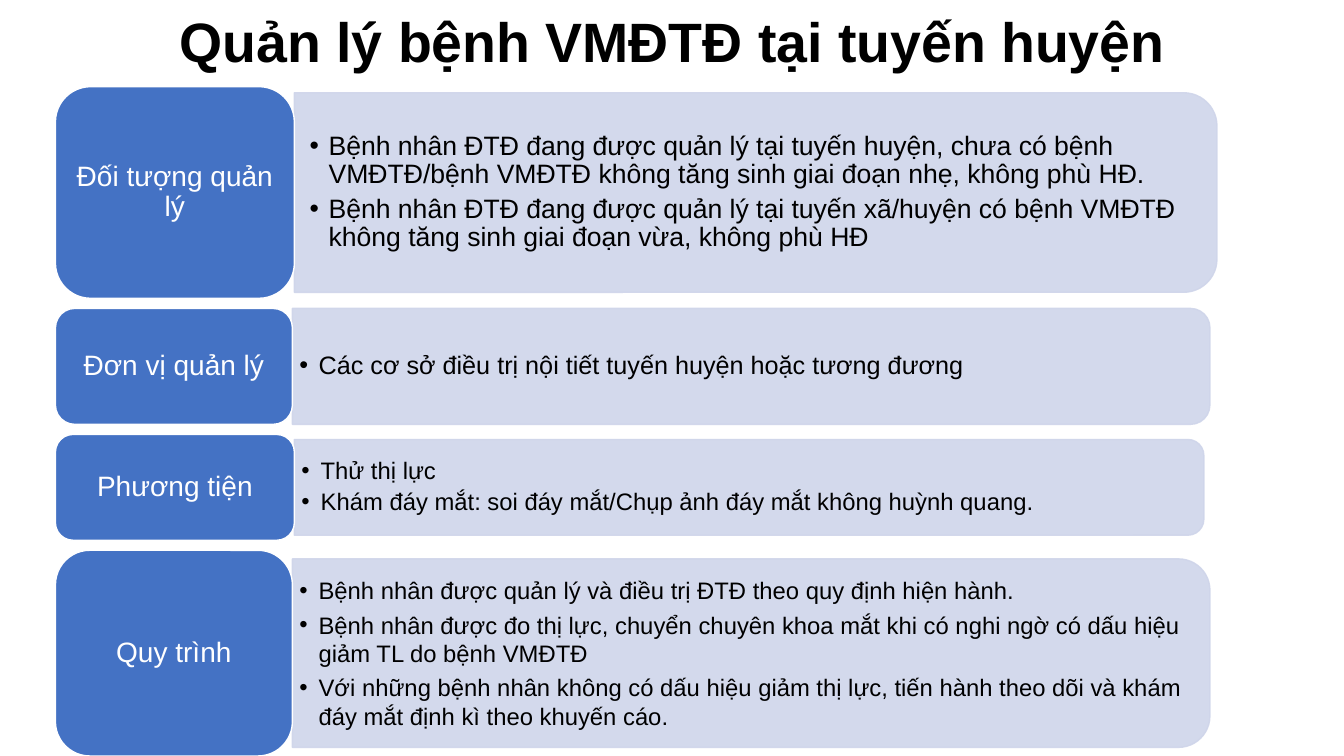
"""Build a slide on managing diabetic eye disease at district level."""
from dataclasses import dataclass

from lxml.etree import SubElement
from pptx import Presentation
from pptx.dml.color import RGBColor
from pptx.enum.shapes import MSO_SHAPE as Preset
from pptx.enum.text import MSO_ANCHOR as Anchor, MSO_AUTO_SIZE as AutoSize, PP_ALIGN as Align
from pptx.oxml.ns import qn
from pptx.util import Inches, Pt

BLACK = RGBColor(0x00, 0x00, 0x00)
WHITE = RGBColor(0xFF, 0xFF, 0xFF)
BLUE = RGBColor(0x44, 0x72, 0xC4)
PALE_BLUE = RGBColor(0xCF, 0xD5, 0xEA)

FONT = "Arial"
LABEL_LEFT = 0.55
FIRST_TOP = 0.86
ROW_GAP = 0.1
CORNER_INSET = 0.0488
BULLET_INDENT = 0.19


@dataclass
class Row:
    """One label with its panel of bullets, lengths in inches."""
    label: str
    bullets: list
    label_size: tuple
    panel_size: tuple
    font_size: int
    margins: tuple = (0.07, 0.04)
    line_spacing: float = 0.9


ROWS = [
    Row("Đối tượng quản lý",
        ["Bệnh nhân ĐTĐ đang được quản lý tại tuyến huyện, chưa có bệnh "
         "VMĐTĐ/bệnh VMĐTĐ không tăng sinh giai đoạn nhẹ, không phù HĐ.",
         "Bệnh nhân ĐTĐ đang được quản lý tại tuyến xã/huyện có bệnh VMĐTĐ "
         "không tăng sinh giai đoạn vừa, không phù HĐ"],
        (2.37, 2.1), (9.15, 1.98), 19, margins=(0.15, 0.07)),
    Row("Đơn vị quản lý",
        ["Các cơ sở điều trị nội tiết tuyến huyện hoặc tương đương"],
        (2.35, 1.15), (9.1, 1.15), 18),
    Row("Phương tiện",
        ["Thử thị lực",
         "Khám đáy mắt: soi đáy mắt/Chụp ảnh đáy mắt không huỳnh quang."],
        (2.37, 1.05), (9.02, 0.95), 17),
    Row("Quy trình",
        ["Bệnh nhân được quản lý và điều trị ĐTĐ theo quy định hiện hành.",
         "Bệnh nhân được đo thị lực, chuyển chuyên khoa mắt khi có nghi ngờ có "
         "dấu hiệu giảm TL do bệnh VMĐTĐ",
         "Với những bệnh nhân không có dấu hiệu giảm thị lực, tiến hành theo dõi "
         "và khám đáy mắt định kì theo khuyến cáo."],
        (2.35, 2.04), (9.1, 1.87), 17, line_spacing=1.0),
]


def format_frame(text_frame, margins):
    """Wrap and vertically centre a text frame with the given margins."""
    text_frame.word_wrap = True
    text_frame.auto_size = AutoSize.NONE
    text_frame.vertical_anchor = Anchor.MIDDLE
    text_frame.margin_left = text_frame.margin_right = Inches(margins[0])
    text_frame.margin_top = text_frame.margin_bottom = Inches(margins[1])


def format_paragraph(paragraph, size, color, align, line_spacing=0.9, bold=False):
    """Set the spacing, alignment and run font of a paragraph."""
    paragraph.alignment = align
    paragraph.line_spacing = line_spacing
    for run in paragraph.runs:
        run.font.name = FONT
        run.font.size = Pt(size)
        run.font.bold = bold
        run.font.color.rgb = color


def add_bullet(paragraph):
    """Give a paragraph a round bullet with a hanging indent."""
    properties = paragraph._p.get_or_add_pPr()
    properties.set("marL", str(Inches(BULLET_INDENT)))
    properties.set("indent", str(-Inches(BULLET_INDENT)))
    SubElement(properties, qn("a:buFont"), typeface=FONT)
    SubElement(properties, qn("a:buChar"), char="•")


def add_filled_shape(slide, preset, left, top, width, height, fill, line):
    """Add a flat preset shape with a one-point outline."""
    shape = slide.shapes.add_shape(
        preset, Inches(left), Inches(top), Inches(width), Inches(height))
    shape.shadow.inherit = False
    shape.fill.solid()
    shape.fill.fore_color.rgb = fill
    shape.line.color.rgb = line
    shape.line.width = Pt(1)
    return shape


def add_title(slide, text):
    """Fill and place the title placeholder."""
    title = slide.shapes.title
    title.left, title.top = Inches(0.92), Inches(0.13)
    title.width, title.height = Inches(11.5), Inches(0.62)
    title.text_frame.text = text
    format_frame(title.text_frame, (0.1, 0.05))
    format_paragraph(title.text_frame.paragraphs[0], 39.6, BLACK, Align.CENTER, bold=True)


def add_panel(slide, left, middle, row):
    """Add a pale panel, rounded on its right side, and its bullets."""
    width, height = row.panel_size
    panel = add_filled_shape(
        slide, Preset.ROUND_2_SAME_RECTANGLE, left + (width - height) / 2,
        middle - width / 2, height, width, PALE_BLUE, PALE_BLUE)
    panel.rotation = 90
    for color in panel._element.spPr.iter(qn("a:srgbClr")):
        SubElement(color, qn("a:alpha"), val="90000")

    inset = height * CORNER_INSET
    box = slide.shapes.add_textbox(
        Inches(left), Inches(middle - height / 2 + inset),
        Inches(width - inset), Inches(height - 2 * inset))
    text_frame = box.text_frame
    text_frame.text = "\n".join(row.bullets)
    format_frame(text_frame, row.margins)
    for paragraph in text_frame.paragraphs:
        paragraph.level = 1
        add_bullet(paragraph)
        paragraph.space_after = Pt(4)
        format_paragraph(paragraph, row.font_size, BLACK, Align.LEFT, row.line_spacing)


def add_label(slide, top, row):
    """Add a blue rounded label."""
    label = add_filled_shape(
        slide, Preset.ROUNDED_RECTANGLE, LABEL_LEFT, top, *row.label_size, BLUE, WHITE)
    label.text_frame.text = row.label
    format_frame(label.text_frame, (0.08, 0.04))
    paragraph = label.text_frame.paragraphs[0]
    paragraph.space_after = Pt(4)
    format_paragraph(paragraph, 20, WHITE, Align.CENTER)


def main():
    """Build and save the presentation."""
    presentation = Presentation()
    presentation.slide_width = Inches(13.33)
    presentation.slide_height = Inches(7.5)
    slide = presentation.slides.add_slide(presentation.slide_layouts[5])
    add_title(slide, "Quản lý bệnh VMĐTĐ tại tuyến huyện")
    top = FIRST_TOP
    for row in ROWS:
        label_width, label_height = row.label_size
        add_panel(slide, LABEL_LEFT + label_width, top + label_height / 2, row)
        add_label(slide, top, row)
        top += label_height + ROW_GAP
    presentation.save("out.pptx")


if __name__ == "__main__":
    main()
